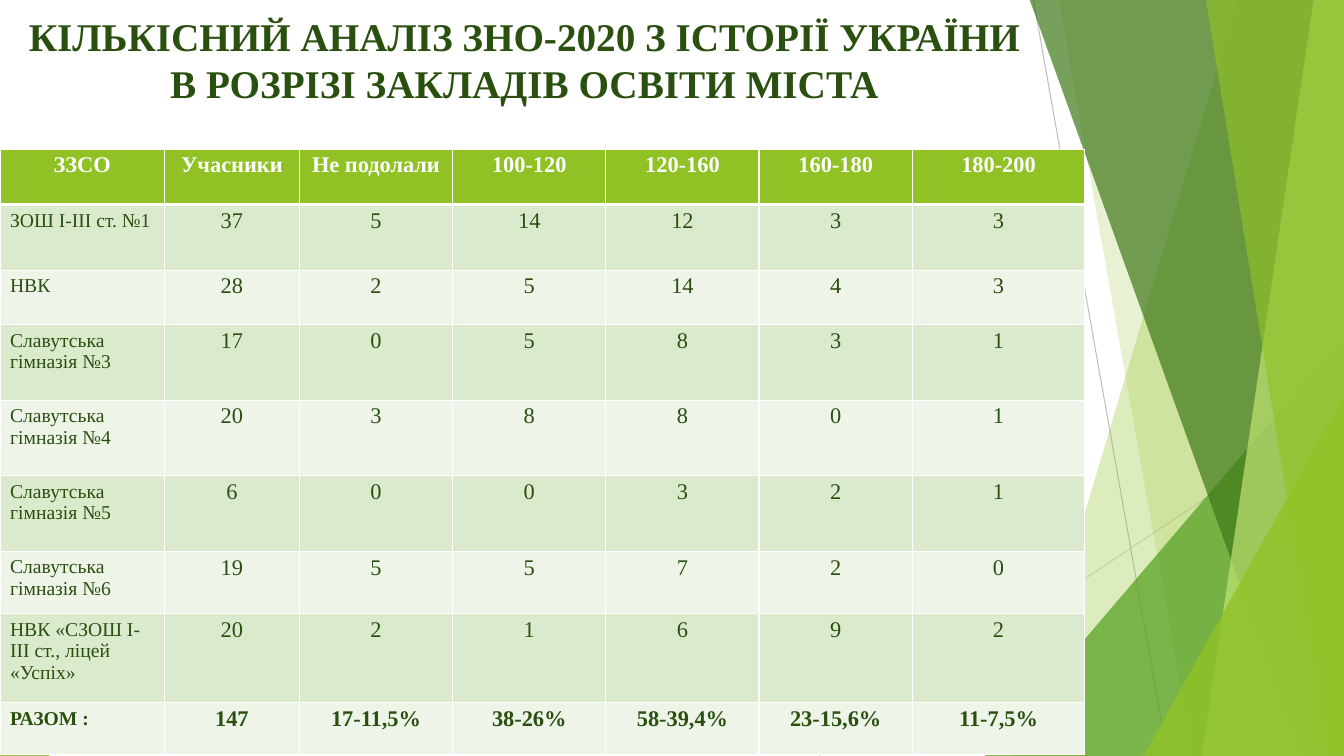
from dataclasses import dataclass

from lxml import etree
from pptx import Presentation
from pptx.dml.color import RGBColor
from pptx.enum import shapes, text
from pptx.oxml import ns
from pptx import util as u


@dataclass(frozen=True)
class Theme:
    font: str = "Times New Roman"
    ink: str = "2A5010"
    white: str = "FFFFFF"
    lime: str = "90C226"
    pale_lime: str = "C0E474"
    green: str = "54A021"
    forest: str = "3F7819"
    band_dark: str = "DBE9CD"
    band_light: str = "EEF4E8"
    ray_dark: str = "BFBFBF"
    ray_light: str = "D9D9D9"
    title_size: int = 28
    value_size: int = 16
    label_size: int = 14
    ray_width: float = 0.75
    border: float = 1
    header_border: float = 3


@dataclass(frozen=True)
class Ray:
    start: tuple[float, float]
    end: tuple[float, float]
    color: str


@dataclass(frozen=True)
class Shard:
    """A band from the top edge to the bottom edge, filling out to the right side."""
    top_x: float
    bottom_x: float
    color: str
    opacity: int


@dataclass(frozen=True)
class Corner:
    """A triangle standing on the bottom edge; apex is 0 for left, 1 for right."""
    left: float
    top: float
    width: float
    apex: int
    color: str
    opacity: int


THEME = Theme()
WIDTH, HEIGHT = 13.33, 7.5
SHARD_TOP = -0.01

RAYS = [
    Ray((10.25, 0), (11.58, HEIGHT), THEME.ray_dark),
    Ray((WIDTH, 4.03), (8.12, HEIGHT), THEME.ray_light),
]
FACETS: list[Shard | Corner] = [
    Shard(12.28, 10.04, THEME.lime, 30),
    Shard(10.5, 11.83, THEME.lime, 20),
    Corner(9.77, 3.33, 3.56, 1, THEME.green, 72),
    Shard(10.21, 12.91, THEME.forest, 70),
    Shard(13.03, 11.92, THEME.pale_lime, 70),
    Shard(11.96, 13.18, THEME.lime, 65),
    Corner(11.34, 3.93, 1.99, 1, THEME.lime, 80),
    Corner(0, 4.39, 0.49, 0, THEME.lime, 85),
]

TITLE = "КІЛЬКІСНИЙ АНАЛІЗ ЗНО-2020 З ІСТОРІЇ УКРАЇНИ В РОЗРІЗІ ЗАКЛАДІВ ОСВІТИ МІСТА"
COLUMN_WIDTHS = [1.63, 1.34, 1.52, 1.52, 1.52, 1.52, 1.71]
ROW_HEIGHTS = [0.55, 0.65, 0.54, 0.75, 0.75, 0.75, 0.62, 0.88, 0.52]
RESULTS = [
    ["ЗЗСО", "Учасники", "Не подолали", "100-120", "120-160", "160-180", "180-200"],
    ["ЗОШ І-ІІІ ст. №1", "37", "5", "14", "12", "3", "3"],
    ["НВК", "28", "2", "5", "14", "4", "3"],
    ["Славутська гімназія №3", "17", "0", "5", "8", "3", "1"],
    ["Славутська гімназія №4", "20", "3", "8", "8", "0", "1"],
    ["Славутська гімназія №5", "6", "0", "0", "3", "2", "1"],
    ["Славутська гімназія №6", "19", "5", "5", "7", "2", "0"],
    ["НВК «СЗОШ І-ІІІ ст., ліцей «Успіх»", "20", "2", "1", "6", "9", "2"],
    ["РАЗОМ :", "147", "17-11,5%", "38-26%", "58-39,4%", "23-15,6%", "11-7,5%"],
]


def add_span(para, words: str, size: float, color: str, bold: bool) -> None:
    span = para.add_run()
    span.text = words
    span.font.name = THEME.font
    span.font.size = u.Pt(size)
    span.font.bold = bold
    span.font.color.rgb = RGBColor.from_string(color)


def draw_ray(page, ray: Ray) -> None:
    points = [u.Inches(value) for value in (*ray.start, *ray.end)]
    line = page.shapes.add_connector(shapes.MSO_CONNECTOR.STRAIGHT, *points)
    line.line.color.rgb = RGBColor.from_string(ray.color)
    line.line.width = u.Pt(THEME.ray_width)
    etree.SubElement(line._element.spPr, ns.qn("a:effectLst"))


def draw_facet(page, facet: Shard | Corner) -> None:
    if isinstance(facet, Shard):
        builder = page.shapes.build_freeform(
            u.Inches(facet.top_x), u.Inches(SHARD_TOP), scale=1.0)
        outline = [(WIDTH, SHARD_TOP), (WIDTH, HEIGHT), (facet.bottom_x, HEIGHT)]
        builder.add_line_segments([(u.Inches(x), u.Inches(y)) for x, y in outline])
        shape = builder.convert_to_shape()
    else:
        shape = page.shapes.add_shape(
            shapes.MSO_SHAPE.ISOSCELES_TRIANGLE, u.Inches(facet.left), u.Inches(facet.top),
            u.Inches(facet.width), u.Inches(HEIGHT - facet.top))
        shape.adjustments[0] = facet.apex
    shape.shadow.inherit = False
    shape.line.fill.background()
    shape.fill.solid()
    shape.fill.fore_color.rgb = RGBColor.from_string(facet.color)
    color = shape._element.spPr.find(ns.qn("a:solidFill"))[0]
    etree.SubElement(color, ns.qn("a:alpha"), val=str(facet.opacity * 1000))


def draw_title(page) -> None:
    box = page.shapes.add_textbox(
        u.Inches(0.11), u.Inches(0.07), u.Inches(10.18), u.Inches(0.64))
    box.text_frame.word_wrap = True
    box.text_frame.vertical_anchor = text.MSO_ANCHOR.TOP
    para = box.text_frame.paragraphs[0]
    para.alignment = text.PP_ALIGN.CENTER
    add_span(para, TITLE, THEME.title_size, THEME.ink, True)


def set_borders(cell, top: float, bottom: float) -> None:
    sides = {"L": THEME.border, "R": THEME.border, "T": top, "B": bottom}
    properties = cell._tc.get_or_add_tcPr()
    for index, (side, width) in enumerate(sides.items()):
        line = etree.Element(ns.qn(f"a:ln{side}"), w=str(u.Pt(width)))
        fill = etree.SubElement(line, ns.qn("a:solidFill"))
        etree.SubElement(fill, ns.qn("a:srgbClr"), val=THEME.white)
        properties.insert(index, line)


def fill_cell(cell, words: str, row: int, column: int) -> None:
    header, total = row == 0, row == len(RESULTS) - 1
    label = column == 0 and not header
    para = cell.text_frame.paragraphs[0]
    if not label:
        cell.margin_left = cell.margin_right = u.Inches(0.07)
        cell.margin_top = cell.margin_bottom = 0
        para.alignment = text.PP_ALIGN.CENTER
        para.line_spacing = 1.15
        para.space_after = u.Pt(10)
    add_span(para, words, THEME.label_size if label else THEME.value_size,
             THEME.white if header else THEME.ink, header or total)
    band = THEME.band_dark if row % 2 else THEME.band_light
    cell.fill.solid()
    cell.fill.fore_color.rgb = RGBColor.from_string(THEME.lime if header else band)
    set_borders(cell, THEME.header_border if row == 1 else THEME.border,
                THEME.header_border if header else THEME.border)


def draw_results(page) -> None:
    frame = page.shapes.add_table(
        len(ROW_HEIGHTS), len(COLUMN_WIDTHS), 0, u.Inches(1.48),
        u.Inches(sum(COLUMN_WIDTHS)), u.Inches(sum(ROW_HEIGHTS)))
    table = frame.table
    for column, width in zip(table.columns, COLUMN_WIDTHS):
        column.width = u.Inches(width)
    for row, height in zip(table.rows, ROW_HEIGHTS):
        row.height = u.Inches(height)
    for row, entries in enumerate(RESULTS):
        for column, words in enumerate(entries):
            fill_cell(table.cell(row, column), words, row, column)


def main() -> None:
    deck = Presentation()
    deck.slide_width, deck.slide_height = u.Inches(WIDTH), u.Inches(HEIGHT)
    page = deck.slides.add_slide(deck.slide_layouts[6])
    for ray in RAYS:
        draw_ray(page, ray)
    for facet in FACETS:
        draw_facet(page, facet)
    draw_title(page)
    draw_results(page)
    deck.save("out.pptx")


if __name__ == "__main__":
    main()
